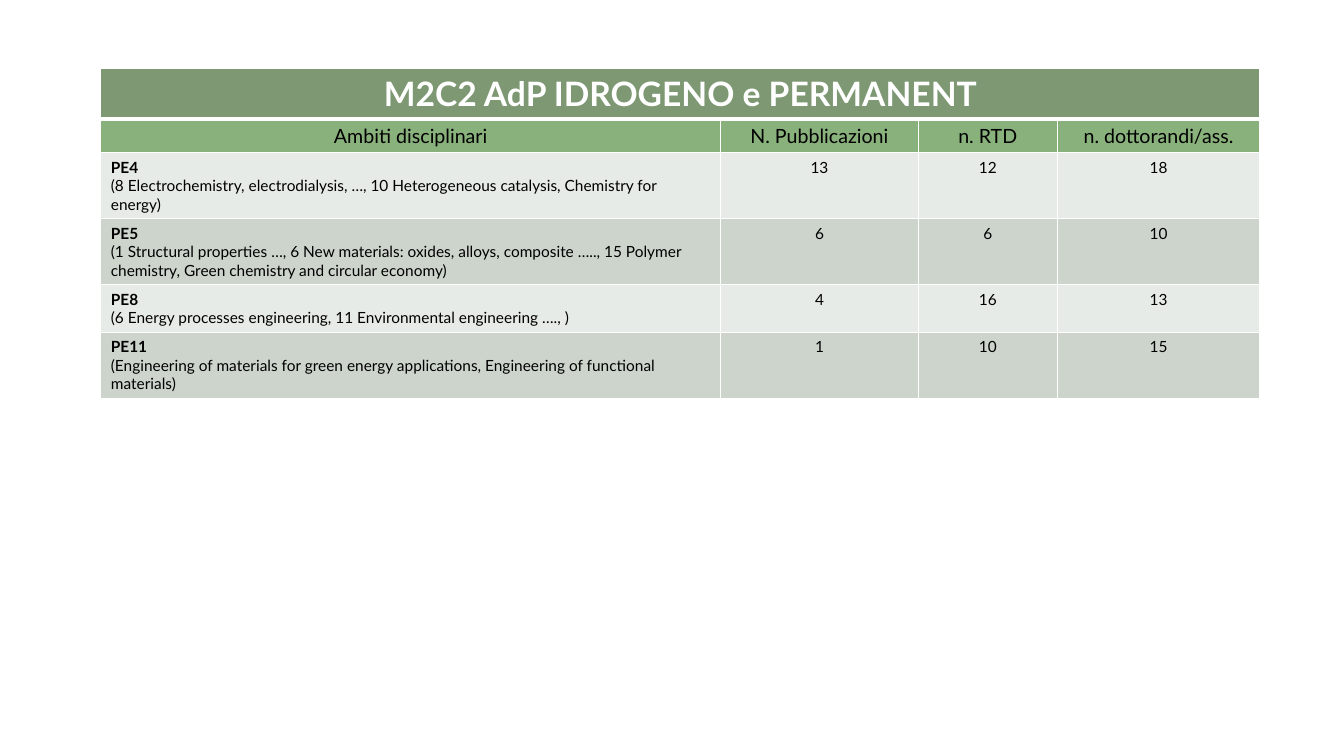
from lxml import etree
from pptx import Presentation
from pptx import util as u
from pptx.dml.color import RGBColor
from pptx.enum import text
from pptx.oxml import ns

COLORS = {"title": "275417", "header": "3B7D23", "light": "E7EBE8",
          "dark": "CCD4CC", "white": "FFFFFF", "black": "000000"}
COL_WIDTHS = [442.8, 141.1, 99.4, 144.7]
ROW_HEIGHTS = [36, 24, 46.8, 46.8, 33.6, 46.8]
TITLE = "M2C2 AdP IDROGENO e PERMANENT"
HEADERS = ["Ambiti disciplinari", "N. Pubblicazioni", "n. RTD", "n. dottorandi/ass."]
FIELDS = [
    ("PE4", "(8 Electrochemistry, electrodialysis, …, 10 Heterogeneous catalysis, "
            "Chemistry for energy)", 13, 12, 18),
    ("PE5", "(1 Structural properties …, 6 New materials: oxides, alloys, composite ….., "
            "15 Polymer chemistry, Green chemistry and circular economy)", 6, 6, 10),
    ("PE8", "(6 Energy processes engineering, 11 Environmental engineering …., )", 4, 16, 13),
    ("PE11", "(Engineering of materials for green energy applications, "
             "Engineering of functional materials)", 1, 10, 15),
]


def style_cell(cell, color, top=1, bottom=1, alpha=None):
    tc_pr = cell._tc.get_or_add_tcPr()
    for side, width in (("L", 1), ("R", 1), ("T", top), ("B", bottom)):
        ln = etree.SubElement(tc_pr, ns.qn(f"a:ln{side}"), w=str(u.Pt(width)))
        line_fill = etree.SubElement(ln, ns.qn("a:solidFill"))
        etree.SubElement(line_fill, ns.qn("a:srgbClr"), val=COLORS["white"])
    cell.fill.solid()
    cell.fill.fore_color.rgb = RGBColor.from_string(COLORS[color])
    if alpha:
        clr = tc_pr.find(ns.qn("a:solidFill")).find(ns.qn("a:srgbClr"))
        etree.SubElement(clr, ns.qn("a:alpha"), val=str(alpha * 1000))


def add_text(p, words, size, bold=False, color="black", centered=True):
    p.alignment = text.PP_ALIGN.CENTER if centered else text.PP_ALIGN.LEFT
    r = p.add_run()
    r.text = words
    r.font.name = "Lato"
    r.font.size = u.Pt(size)
    r.font.bold = bold
    r.font.color.rgb = RGBColor.from_string(COLORS[color])


prs = Presentation()
prs.slide_width, prs.slide_height = u.Pt(960), u.Pt(540)
s = prs.slides.add_slide(prs.slide_layouts[6])
table = s.shapes.add_table(len(ROW_HEIGHTS), len(COL_WIDTHS), u.Pt(72), u.Pt(49),
                           u.Pt(sum(COL_WIDTHS)), u.Pt(sum(ROW_HEIGHTS))).table
for column, width in zip(table.columns, COL_WIDTHS):
    column.width = u.Pt(width)
for row, height in zip(table.rows, ROW_HEIGHTS):
    row.height = u.Pt(height)

table.cell(0, 0).merge(table.cell(0, 3))
add_text(table.cell(0, 0).text_frame.paragraphs[0], TITLE, 24, True, "white")
for j, header in enumerate(HEADERS):
    style_cell(table.cell(0, j), "title", bottom=3, alpha=60)
    style_cell(table.cell(1, j), "header", top=3, alpha=60)
    add_text(table.cell(1, j).text_frame.paragraphs[0], header, 14)

for i, (code, topics, *counts) in enumerate(FIELDS):
    cells = table.rows[i + 2].cells
    for cell in cells:
        style_cell(cell, "dark" if i % 2 else "light")
    tf = cells[0].text_frame
    add_text(tf.paragraphs[0], code, 11, True, centered=False)
    add_text(tf.add_paragraph(), topics, 11, centered=False)
    for j, count in enumerate(counts, 1):
        add_text(table.cell(i + 2, j).text_frame.paragraphs[0], str(count), 11)

prs.save("out.pptx")
